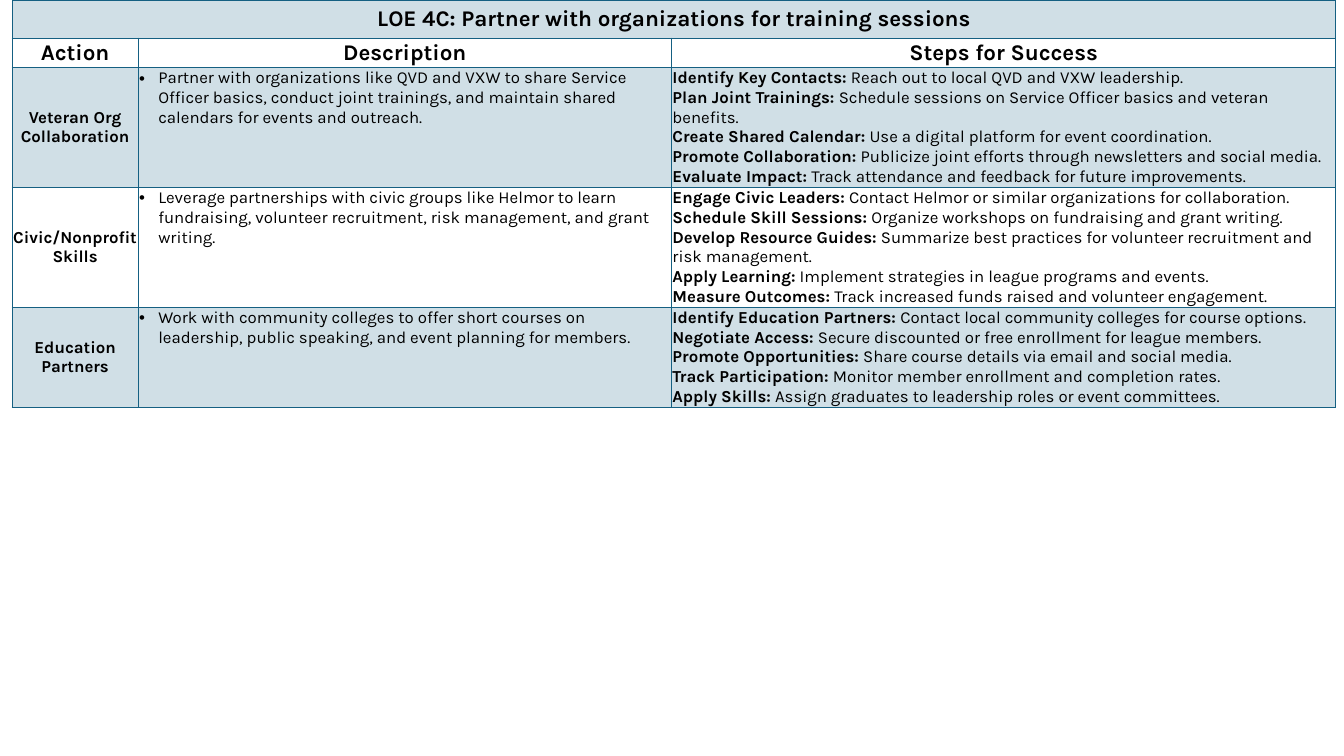
import pptx
import pptx.dml.color
import pptx.enum.text
import pptx.oxml.ns
import pptx.util
from dataclasses import dataclass
from lxml import etree
from pptx.util import Inches

qn = pptx.oxml.ns.qn
PP_ALIGN = pptx.enum.text.PP_ALIGN
MSO_ANCHOR = pptx.enum.text.MSO_ANCHOR


@dataclass(frozen=True)
class Theme:
    font: str = "Karla"
    text: str = "000000"
    accent: str = "156082"
    tint_percent: int = 20
    heading_size: int = 16
    body_size: int = 12
    border_width: int = 1


THEME = Theme()

TITLE = "LOE 4C: Partner with organizations for training sessions"
HEADINGS = ["Action", "Description", "Steps for Success"]
COLUMN_WIDTHS = [1.25, 5.29, 6.59]
ROW_HEIGHTS = [0.38, 0.29, 1.14, 0.95, 0.95]

ACTIONS = [
    ("Veteran Org Collaboration",
     "Partner with organizations like QVD and VXW to share Service Officer basics, "
     "conduct joint trainings, and maintain shared calendars for events and outreach.",
     [("Identify Key Contacts:", "Reach out to local QVD and VXW leadership."),
      ("Plan Joint Trainings:",
       "Schedule sessions on Service Officer basics and veteran benefits."),
      ("Create Shared Calendar:", "Use a digital platform for event coordination."),
      ("Promote Collaboration:",
       "Publicize joint efforts through newsletters and social media."),
      ("Evaluate Impact:", "Track attendance and feedback for future improvements.")]),
    ("Civic/Nonprofit Skills",
     "Leverage partnerships with civic groups like Helmor to learn fundraising, "
     "volunteer recruitment, risk management, and grant writing.",
     [("Engage Civic Leaders:",
       "Contact Helmor or similar organizations for collaboration."),
      ("Schedule Skill Sessions:", "Organize workshops on fundraising and grant writing."),
      ("Develop Resource Guides:",
       "Summarize best practices for volunteer recruitment and risk management."),
      ("Apply Learning:", "Implement strategies in league programs and events."),
      ("Measure Outcomes:", "Track increased funds raised and volunteer engagement.")]),
    ("Education Partners",
     "Work with community colleges to offer short courses on leadership, "
     "public speaking, and event planning for members.",
     [("Identify Education Partners:",
       "Contact local community colleges for course options."),
      ("Negotiate Access:", "Secure discounted or free enrollment for league members."),
      ("Promote Opportunities:", "Share course details via email and social media."),
      ("Track Participation:", "Monitor member enrollment and completion rates."),
      ("Apply Skills:", "Assign graduates to leadership roles or event committees.")]),
]


def set_font(p, size, bold=None):
    p.font.name = THEME.font
    p.font.size = pptx.util.Pt(size)
    p.font.color.rgb = pptx.dml.color.RGBColor.from_string(THEME.text)
    p.font.bold = bold


def add_borders(cell):
    tc_pr = cell._tc.get_or_add_tcPr()
    for side in ("lnL", "lnR", "lnT", "lnB"):
        ln = etree.SubElement(tc_pr, qn(f"a:{side}"),
                              w=str(pptx.util.Pt(THEME.border_width)))
        fill = etree.SubElement(ln, qn("a:solidFill"))
        etree.SubElement(fill, qn("a:srgbClr"), val=THEME.accent)


def fill_cell(cell, tinted):
    if not tinted:
        cell.fill.background()
        return
    cell.fill.solid()
    cell.fill.fore_color.rgb = pptx.dml.color.RGBColor.from_string(THEME.accent)
    color = cell._tc.tcPr.find(qn("a:solidFill")).find(qn("a:srgbClr"))
    etree.SubElement(color, qn("a:alpha"), val=str(THEME.tint_percent * 1000))


def style_cell(cell, tinted):
    cell.margin_left = cell.margin_right = Inches(0.01)
    cell.margin_top = cell.margin_bottom = Inches(0.01)
    add_borders(cell)
    fill_cell(cell, tinted)


def write_label(cell, text, size):
    """Write bold text in the middle of the cell."""
    cell.vertical_anchor = MSO_ANCHOR.MIDDLE
    p = cell.text_frame.paragraphs[0]
    p.text = text
    p.alignment = PP_ALIGN.CENTER
    set_font(p, size, True)


def write_bullet(cell, text):
    p = cell.text_frame.paragraphs[0]
    p.text = text
    p_pr = p._p.get_or_add_pPr()
    indent = Inches(0.19)
    p_pr.set("marL", str(indent))
    p_pr.set("indent", str(-indent))
    etree.SubElement(p_pr, qn("a:buFont"), typeface="Arial")
    etree.SubElement(p_pr, qn("a:buChar"), char="•")
    set_font(p, THEME.body_size, False)


def write_steps(cell, steps):
    tf = cell.text_frame
    for i, (name, detail) in enumerate(steps):
        p = tf.add_paragraph() if i else tf.paragraphs[0]
        set_font(p, THEME.body_size)
        for text, bold in ((name, True), (f" {detail}", False)):
            r = p.add_run()
            r.text = text
            r.font.bold = bold


def add_grid(s):
    """Add the empty table, with every other row tinted."""
    table = s.shapes.add_table(
        len(ROW_HEIGHTS), len(COLUMN_WIDTHS), Inches(0.12), Inches(0),
        Inches(sum(COLUMN_WIDTHS)), Inches(sum(ROW_HEIGHTS))).table
    table.first_row = table.horz_banding = False
    for column, width in zip(table.columns, COLUMN_WIDTHS):
        column.width = Inches(width)
    for i, (row, height) in enumerate(zip(table.rows, ROW_HEIGHTS)):
        row.height = Inches(height)
        for cell in row.cells:
            style_cell(cell, tinted=i % 2 == 0)
    return table


def main():
    prs = pptx.Presentation()
    prs.slide_width, prs.slide_height = Inches(13.33), Inches(7.5)
    s = prs.slides.add_slide(prs.slide_layouts[6])

    table = add_grid(s)
    table.cell(0, 0).merge(table.cell(0, len(COLUMN_WIDTHS) - 1))
    write_label(table.cell(0, 0), TITLE, THEME.heading_size)
    for column, heading in enumerate(HEADINGS):
        write_label(table.cell(1, column), heading, THEME.heading_size)
    for row, (action, description, steps) in enumerate(ACTIONS, start=2):
        write_label(table.cell(row, 0), action, THEME.body_size)
        write_bullet(table.cell(row, 1), description)
        write_steps(table.cell(row, 2), steps)

    prs.save("out.pptx")


if __name__ == "__main__":
    main()
